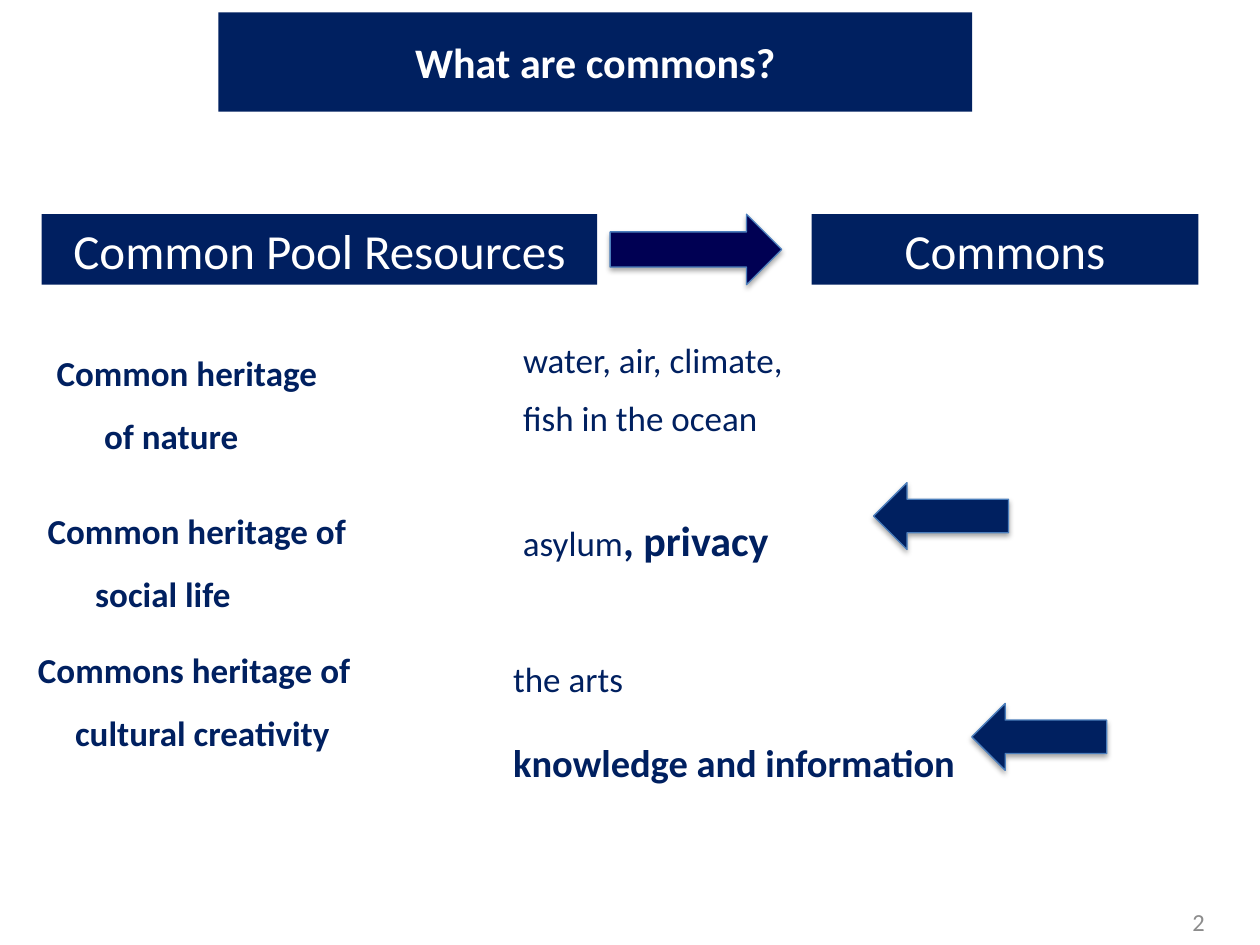
import pptx
import pptx.dml.color
import pptx.enum.shapes
import pptx.enum.text
import pptx.oxml
import pptx.util
from pptx.util import Cm

NAVY = "002060"
WHITE = "FFFFFF"
ALIGN = pptx.enum.text.PP_ALIGN
ANCHOR = pptx.enum.text.MSO_ANCHOR
SHAPES = pptx.enum.shapes.MSO_SHAPE
NAMESPACE = "http://schemas.openxmlformats.org/drawingml/2006/main"
SHADOW = (
    f'<a:effectLst xmlns:a="{NAMESPACE}">'
    '<a:outerShdw blurRad="39370" dist="22860" dir="5400000" rotWithShape="0">'
    '<a:srgbClr val="000000"><a:alpha val="35000"/></a:srgbClr>'
    "</a:outerShdw></a:effectLst>"
)


def colour(value):
    return pptx.dml.color.RGBColor.from_string(value)


def apply_format(target, values):
    for name, value in values.items():
        setattr(target, name, value)


def place(shape, box):
    apply_format(shape, dict(zip(("left", "top", "width", "height"), map(Cm, box))))


def paint(shape, fill):
    shape.fill.solid()
    shape.fill.fore_color.rgb = colour(fill)


def add_span(para, text, size, hue=NAVY, bold=False):
    span = para.add_run()
    span.text = text
    apply_format(span.font, {"name": "Calibri", "size": pptx.util.Pt(size), "bold": bold})
    span.font.color.rgb = colour(hue)


def add_text_box(page, box):
    return page.shapes.add_textbox(*map(Cm, box))


def write_paragraphs(shape, box, paragraphs, spacing, margin=0.0, indent=0.0, align=ALIGN.LEFT):
    """Fill a shape with unbulleted paragraphs, each a list of (text, size, bold)."""
    place(shape, box)
    frame = shape.text_frame
    apply_format(frame, {"word_wrap": True, "vertical_anchor": ANCHOR.TOP,
                         "auto_size": pptx.enum.text.MSO_AUTO_SIZE.NONE})
    for index, spans in enumerate(paragraphs):
        para = frame.add_paragraph() if index else frame.paragraphs[0]
        apply_format(para, {"alignment": align, "line_spacing": spacing,
                            "space_before": pptx.util.Pt(4)})
        properties = para._p.get_or_add_pPr()
        properties.set("marL", str(Cm(margin)))
        properties.set("indent", str(Cm(indent)))
        properties.append(pptx.oxml.parse_xml(f'<a:buNone xmlns:a="{NAMESPACE}"/>'))
        for text, size, bold in spans:
            add_span(para, text, size, bold=bold)


def add_title(page, box):
    title = page.shapes.title
    place(title, box)
    paint(title, NAVY)
    apply_format(title.text_frame, {
        "vertical_anchor": ANCHOR.MIDDLE, "word_wrap": True,
        "margin_left": 0, "margin_right": 0, "margin_top": 0, "margin_bottom": 0})
    para = title.text_frame.paragraphs[0]
    para.alignment = ALIGN.CENTER
    add_span(para, "What are commons?", 24, WHITE, True)


def add_banner(page, box, text, fill):
    banner = page.shapes.add_shape(SHAPES.RECTANGLE, *map(Cm, box))
    paint(banner, fill)
    banner.line.fill.background()
    banner.shadow.inherit = False
    banner.text_frame.vertical_anchor = ANCHOR.MIDDLE
    para = banner.text_frame.paragraphs[0]
    para.alignment = ALIGN.CENTER
    add_span(para, text, 28, WHITE)


def add_arrow(page, box, kind, fill):
    arrow = page.shapes.add_shape(kind, *map(Cm, box))
    paint(arrow, fill)
    arrow.line.color.rgb = colour("4B7EBC")
    arrow.line.width = pptx.util.Pt(0.75)
    arrow._element.spPr.append(pptx.oxml.parse_xml(SHADOW))


def add_header_row(page, left, top, height):
    add_banner(page, (left, top, 11.2, height), "Common Pool Resources", "001F60")
    add_arrow(page, (left + 11.46, top, 3.46, height), SHAPES.RIGHT_ARROW, "000053")
    add_banner(page, (left + 15.52, top, 7.8, height), "Commons", NAVY)


def add_heritage_column(page):
    rows = [
        ((0.89, 6.53, 6.4, 2.59), "Common heritage of nature", 0.96, -0.96, ALIGN.LEFT),
        ((0.71, 9.73, 7.6, 2.59), "Common heritage of social life", 0.96, -0.96, ALIGN.LEFT),
        ((-0.3, 12.52, 7.8, 3.4), "Commons heritage of cultural creativity",
         0.96, -0.33, ALIGN.CENTER),
    ]
    for box, text, margin, indent, align in rows:
        write_paragraphs(add_text_box(page, box), box, [[(text, 20, True)]],
                         1.5, margin, indent, align)


def add_examples_column(page, left, top):
    nature, culture = list(page.placeholders)[1:]
    write_paragraphs(nature, (left, top, 8.03, 2.59),
                     [[("water, air, climate,", 20, False)],
                      [("fish in the ocean", 20, False)]], 1.2, 0.96, -0.96)
    social_box = (left, top + 3, 6.17, 2.59)
    write_paragraphs(add_text_box(page, social_box), social_box,
                     [[("asylum", 20, False), (", privacy", 24, True)]], 1.7)
    write_paragraphs(culture, (left - 0.2, top + 6, 9.86, 3.84),
                     [[("the arts", 20, False)],
                      [("knowledge and information", 22, True)]], 1.7)
    # Arrows pointing at privacy and at knowledge
    for across, down in ((7.32, 3.2), (9.3, 7.65)):
        add_arrow(page, (left + across, top + down, 2.72, 1.35), SHAPES.LEFT_ARROW, NAVY)


def add_page_number(page, box):
    number = add_text_box(page, box)
    number.text_frame.word_wrap = True
    number.text_frame.vertical_anchor = ANCHOR.MIDDLE
    para = number.text_frame.paragraphs[0]
    para.alignment = ALIGN.RIGHT
    add_span(para, "2", 14, "8C8C8C")


def main():
    deck = pptx.Presentation()
    deck.slide_width, deck.slide_height = Cm(25.4), Cm(19.05)
    page = deck.slides.add_slide(deck.slide_layouts.get_by_name("Two Content"))
    add_title(page, (4.4, 0.25, 15.2, 2))
    add_header_row(page, 0.84, 4.32, 1.42)
    add_heritage_column(page)
    add_examples_column(page, 10.29, 6.53)
    add_page_number(page, (18.62, 18.08, 5.92, 1.02))
    deck.save("out.pptx")


if __name__ == "__main__":
    main()
